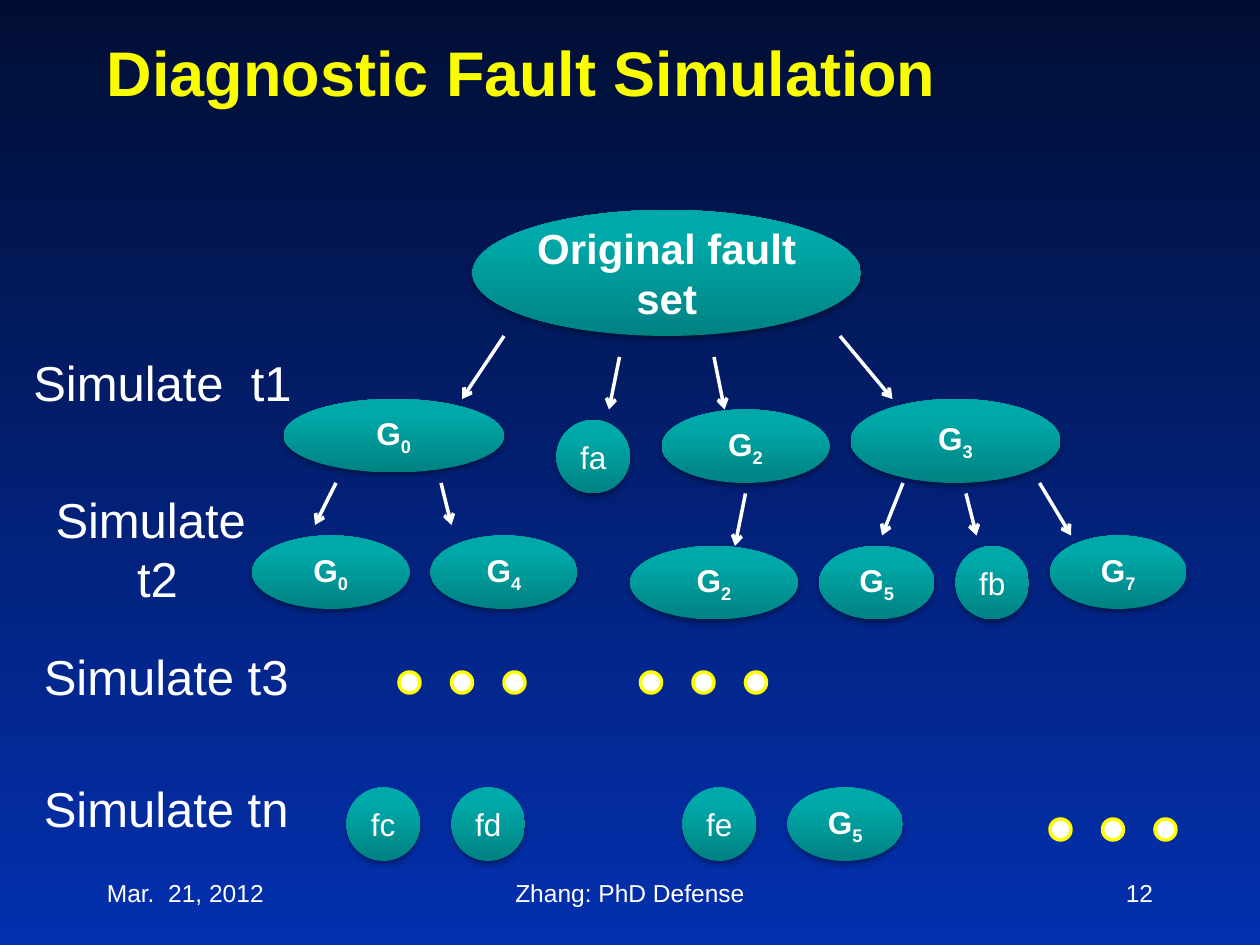
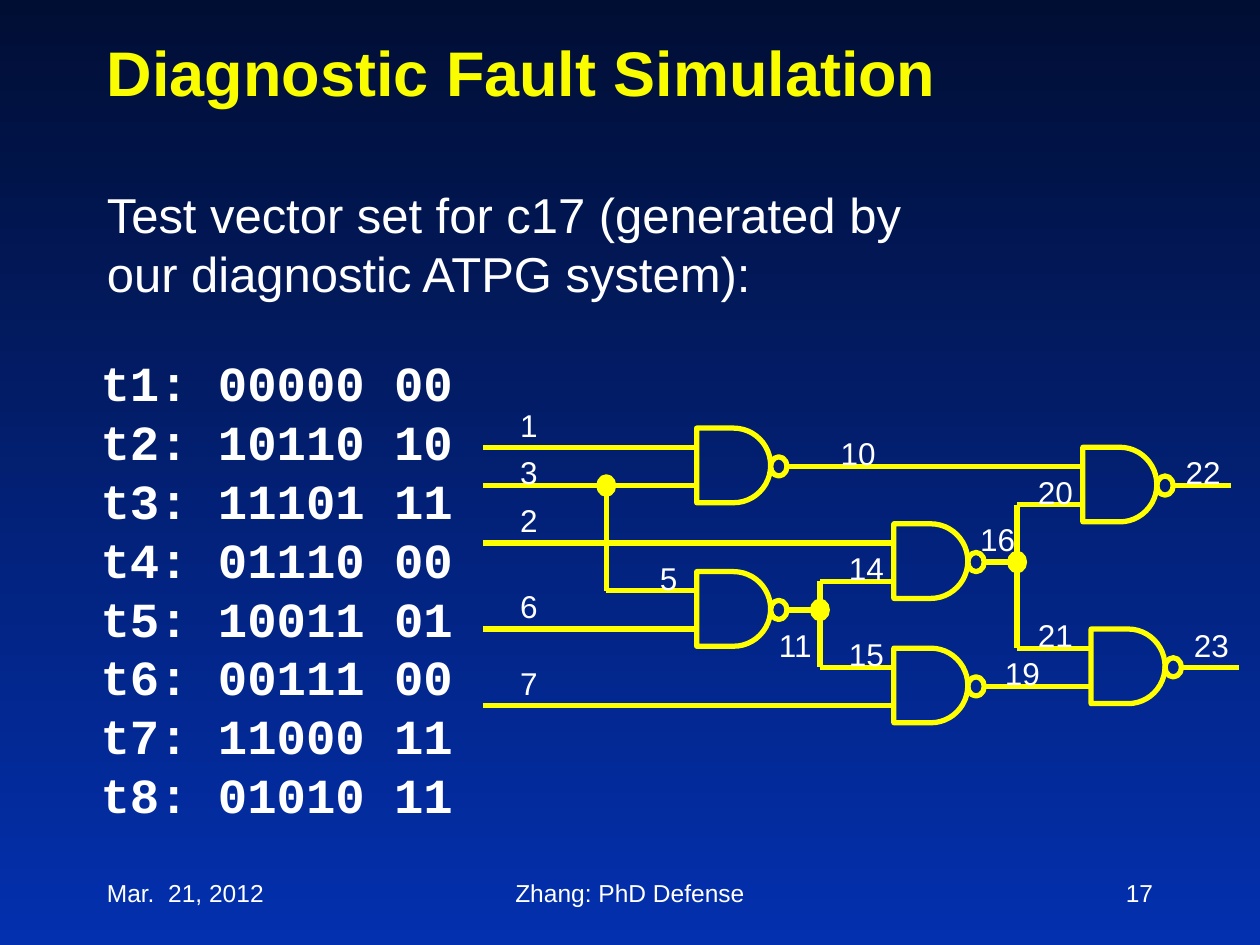
from dataclasses import dataclass

import lxml.etree
import pptx
import pptx.dml.color
import pptx.enum.shapes
import pptx.enum.text
import pptx.oxml.ns
import pptx.presentation
import pptx.shapes.autoshape
import pptx.slide
import pptx.text.text
import pptx.util

RGB = pptx.dml.color.RGBColor
SHAPE = pptx.enum.shapes.MSO_SHAPE
ALIGN = pptx.enum.text.PP_ALIGN
ANCHOR = pptx.enum.text.MSO_ANCHOR
qn = pptx.oxml.ns.qn

NAVY = RGB(0x01, 0x0E, 0x34)
BLUE = RGB(0x03, 0x30, 0xAF)
TITLE_YELLOW = RGB(0xFA, 0xFD, 0x00)
YELLOW = RGB(0xFF, 0xFF, 0x00)
WHITE = RGB(0xFF, 0xFF, 0xFF)
DARK_TEAL = RGB(0x00, 0x82, 0x82)
TEAL = RGB(0x00, 0xA9, 0xA9)

WIDTH = pptx.util.Inches(10)
HEIGHT = pptx.util.Inches(7.5)


@dataclass(frozen=True)
class Grid:
    col: float
    row: float
    left: float = 0
    top: float = 0

    def x(self, c: float) -> int:
        return round(self.left + c * self.col)

    def y(self, r: float) -> int:
        return round(self.top + r * self.row)

    def box(self, c: float, r: float, w: float, h: float) -> tuple[int, int, int, int]:
        return self.x(c), self.y(r), round(w * self.col), round(h * self.row)


PAGE = Grid(WIDTH / 120, HEIGHT / 90)
CIRCUIT = Grid(WIDTH * 0.6 / 92, HEIGHT * 0.41 / 40.5,
               PAGE.x(46), PAGE.y(42.6))


@dataclass(frozen=True)
class Node:
    name: str
    sub: str
    c: float
    r: float
    w: float = 7
    h: float = 7
    size: int = 18


@dataclass(frozen=True)
class Label:
    text: str
    c: float
    r: float
    w: float = 9
    h: float = 5
    align: ALIGN = ALIGN.LEFT


@dataclass(frozen=True)
class Wire:
    c1: float
    r1: float
    c2: float
    r2: float


@dataclass(frozen=True)
class Gate:
    c: float
    r: float


NODES = [
    Node("Original fault set", "", 45, 20, 37, 12, 24),
    Node("G", "0", 27, 38, 21),
    Node("fa", "", 53, 40),
    Node("G", "2", 63, 39, 16),
    Node("G", "3", 81, 38, 20, 8),
    Node("G", "0", 24, 51, 15),
    Node("G", "4", 41, 51, 14),
    Node("G", "2", 60, 52, 16),
    Node("G", "5", 78, 52, 11),
    Node("fb", "", 91, 52),
    Node("G", "7", 100, 51, 13),
    Node("fc", "", 33, 75),
    Node("fd", "", 43, 75),
    Node("fe", "", 65, 75),
    Node("G", "5", 75, 75, 11),
]
ARROWS = [
    Wire(48, 32, 44, 38), Wire(59, 34, 58, 39), Wire(68, 34, 69, 39),
    Wire(80, 32, 85, 38), Wire(32, 46, 30, 50), Wire(42, 46, 43, 50),
    Wire(71, 47, 70, 52), Wire(86, 46, 84, 51), Wire(92, 47, 93, 51),
    Wire(99, 46, 102, 51),
]
STEPS = [
    Label("Simulate  t1", 2, 33, 29, 7),
    Label("Simulate  t2", 3, 46, 24, 12, ALIGN.CENTER),
    Label("Simulate t3", 3, 61, 29, 7),
    Label("Simulate tn", 3, 73.6, 29, 7),
]
ELLIPSES = [(38, 64), (61, 64), (100, 78)]

VECTORS = ["00000 00", "10110 10", "11101 11", "01110 00",
           "10011 01", "00111 00", "11000 11", "01010 11"]
GATES = [Gate(26, -2), Gate(26, 13), Gate(50, 8), Gate(50, 21),
         Gate(73, 0), Gate(74, 19)]
WIRES = [
    Wire(0, 0, 26, 0), Wire(0, 4, 26, 4), Wire(0, 10, 50, 10),
    Wire(0, 19, 26, 19), Wire(0, 27, 50, 27), Wire(15, 4, 15, 15),
    Wire(15, 15, 26, 15), Wire(37, 2, 73, 2), Wire(37, 17, 41, 17),
    Wire(41, 14, 41, 23), Wire(41, 14, 50, 14), Wire(41, 23, 50, 23),
    Wire(61, 12, 65, 12), Wire(65, 6, 65, 21), Wire(65, 6, 73, 6),
    Wire(65, 21, 74, 21), Wire(61, 25, 74, 25), Wire(84, 4, 91, 4),
    Wire(85, 23, 92, 23),
]
JUNCTIONS = [(15, 4), (41, 17), (65, 12)]
NETS = [
    Label("1", 3, -5), Label("3", 3, 0), Label("2", 3, 5), Label("6", 3, 14),
    Label("7", 3, 22), Label("5", 20, 11), Label("10", 42, -2),
    Label("11", 34.5, 18), Label("14", 43, 10), Label("15", 43, 19),
    Label("16", 59, 7), Label("19", 62, 21), Label("20", 66, 2),
    Label("21", 66, 17), Label("22", 84, 0), Label("23", 85, 18),
]


def set_font(p: pptx.text.text._Paragraph, size: float, bold: bool = False,
             color: RGB = WHITE, name: str = "Arial") -> None:
    f = p.font
    f.name, f.size, f.bold = name, pptx.util.Pt(size), bold
    f.color.rgb = color


def add_text(s: pptx.slide.Slide, grid: Grid, label: Label, size: float,
             bold: bool = False, color: RGB = WHITE, name: str = "Arial",
             anchor: ANCHOR = ANCHOR.TOP) -> None:
    tf = s.shapes.add_textbox(*grid.box(label.c, label.r, label.w, label.h)).text_frame
    tf.word_wrap = True
    tf.vertical_anchor = anchor
    tf.text = label.text
    for p in tf.paragraphs:
        p.alignment = label.align
        set_font(p, size, bold, color, name)


def add_line(s: pptx.slide.Slide, grid: Grid, wire: Wire, color: RGB,
             width: float, arrow: bool = False) -> None:
    cn = s.shapes.add_connector(
        pptx.enum.shapes.MSO_CONNECTOR.STRAIGHT, grid.x(wire.c1), grid.y(wire.r1),
        grid.x(wire.c2), grid.y(wire.r2))
    cn.line.color.rgb = color
    cn.line.width = pptx.util.Pt(width)
    if arrow:
        lxml.etree.SubElement(cn.line._get_or_add_ln(), qn("a:tailEnd"), type="arrow")
    lxml.etree.SubElement(cn._element.spPr, qn("a:effectLst"))


def add_outline(s: pptx.slide.Slide, grid: Grid, kind: SHAPE,
                area: tuple[float, float, float, float], width: float,
                fill: RGB | None = None) -> None:
    sp = s.shapes.add_shape(kind, *grid.box(*area))
    sp.shadow.inherit = False
    sp.line.color.rgb = YELLOW
    sp.line.width = pptx.util.Pt(width)
    if fill is None:
        sp.fill.background()
    else:
        sp.fill.solid()
        sp.fill.fore_color.rgb = fill


def set_gradient(fill: pptx.dml.fill.FillFormat, start: RGB, end: RGB,
                 angle: float, stop: float = 1) -> None:
    fill.gradient()
    fill.gradient_angle = angle
    first, last = fill.gradient_stops
    first.color.rgb, first.position = start, 0
    last.color.rgb, last.position = end, stop


def add_shadow(sp: pptx.shapes.autoshape.Shape) -> None:
    sp.shadow.inherit = False
    effects = sp._element.spPr.find(qn("a:effectLst"))
    shadow = lxml.etree.SubElement(
        effects, qn("a:outerShdw"), blurRad=str(pptx.util.Pt(3.1)),
        dist=str(pptx.util.Pt(1.8)), dir="5400000", rotWithShape="0")
    color = lxml.etree.SubElement(shadow, qn("a:srgbClr"), val="000000")
    lxml.etree.SubElement(color, qn("a:alpha"), val="35000")


def add_node(s: pptx.slide.Slide, node: Node) -> None:
    sp = s.shapes.add_shape(SHAPE.OVAL, *PAGE.box(node.c, node.r, node.w, node.h))
    set_gradient(sp.fill, DARK_TEAL, TEAL, 90, 0.8)
    sp.line.fill.background()
    add_shadow(sp)
    tf = sp.text_frame
    tf.word_wrap = True
    tf.margin_left = tf.margin_right = tf.margin_top = tf.margin_bottom = 0
    tf.vertical_anchor = ANCHOR.MIDDLE
    p = tf.paragraphs[0]
    p.alignment = ALIGN.CENTER
    set_font(p, node.size, bool(node.sub) or node.size > 18)
    p.add_run().text = node.name
    if node.sub:
        r = p.add_run()
        r.text = node.sub
        r._r.get_or_add_rPr().set("baseline", "-25000")


def add_gate(s: pptx.slide.Slide, gate: Gate) -> None:
    add_outline(s, CIRCUIT, SHAPE.FLOWCHART_DELAY, (gate.c, gate.r, 9, 7.8), 3)
    add_outline(s, CIRCUIT, SHAPE.OVAL, (gate.c + 9, gate.r + 3, 2, 2), 3)


def add_base(prs: pptx.presentation.Presentation, number: int) -> pptx.slide.Slide:
    s = prs.slides.add_slide(prs.slide_layouts[6])
    set_gradient(s.background.fill, NAVY, BLUE, 270)
    add_text(s, PAGE, Label("Diagnostic Fault Simulation", 9, 3, 102, 8), 36,
             True, TITLE_YELLOW, anchor=ANCHOR.BOTTOM)
    for label in (Label("Mar.  21, 2012", 9, 82, 25, 6),
                  Label("Zhang: PhD Defense", 41, 82, 38, 6, ALIGN.CENTER),
                  Label(str(number), 86, 82, 25, 6, ALIGN.RIGHT)):
        add_text(s, PAGE, label, 14, anchor=ANCHOR.MIDDLE)
    return s


def add_tree_slide(prs: pptx.presentation.Presentation) -> None:
    s = add_base(prs, 12)
    for step in STEPS:
        add_text(s, PAGE, step, 28)
    for arrow in ARROWS:
        add_line(s, PAGE, arrow, WHITE, 2, True)
    for node in NODES:
        add_node(s, node)
    for c, r in ELLIPSES:
        for i in range(3):
            add_outline(s, PAGE, SHAPE.FLOWCHART_CONNECTOR, (c + 5 * i, r, 2, 2), 2, WHITE)


def add_circuit_slide(prs: pptx.presentation.Presentation) -> None:
    s = add_base(prs, 17)
    add_text(s, PAGE, Label("Test vector set for c17 (generated by "
                            "our diagnostic ATPG system):", 9, 17, 83, 12.5), 28)
    rows = "\n".join(f"t{i}: {v}" for i, v in enumerate(VECTORS, 1))
    add_text(s, PAGE, Label(rows, 8.4, 33, 56.6, 46.4), 28, True, name="Courier New")
    for gate in GATES:
        add_gate(s, gate)
    for wire in WIRES:
        add_line(s, CIRCUIT, wire, YELLOW, 3)
    for net in NETS:
        add_text(s, CIRCUIT, net, 18)
    for c, r in JUNCTIONS:
        add_outline(s, CIRCUIT, SHAPE.FLOWCHART_CONNECTOR, (c - 1, r - 1, 2, 2), 2, YELLOW)


def main() -> None:
    prs = pptx.Presentation()
    prs.slide_width, prs.slide_height = WIDTH, HEIGHT
    add_tree_slide(prs)
    add_circuit_slide(prs)
    prs.save("out.pptx")


if __name__ == "__main__":
    main()
